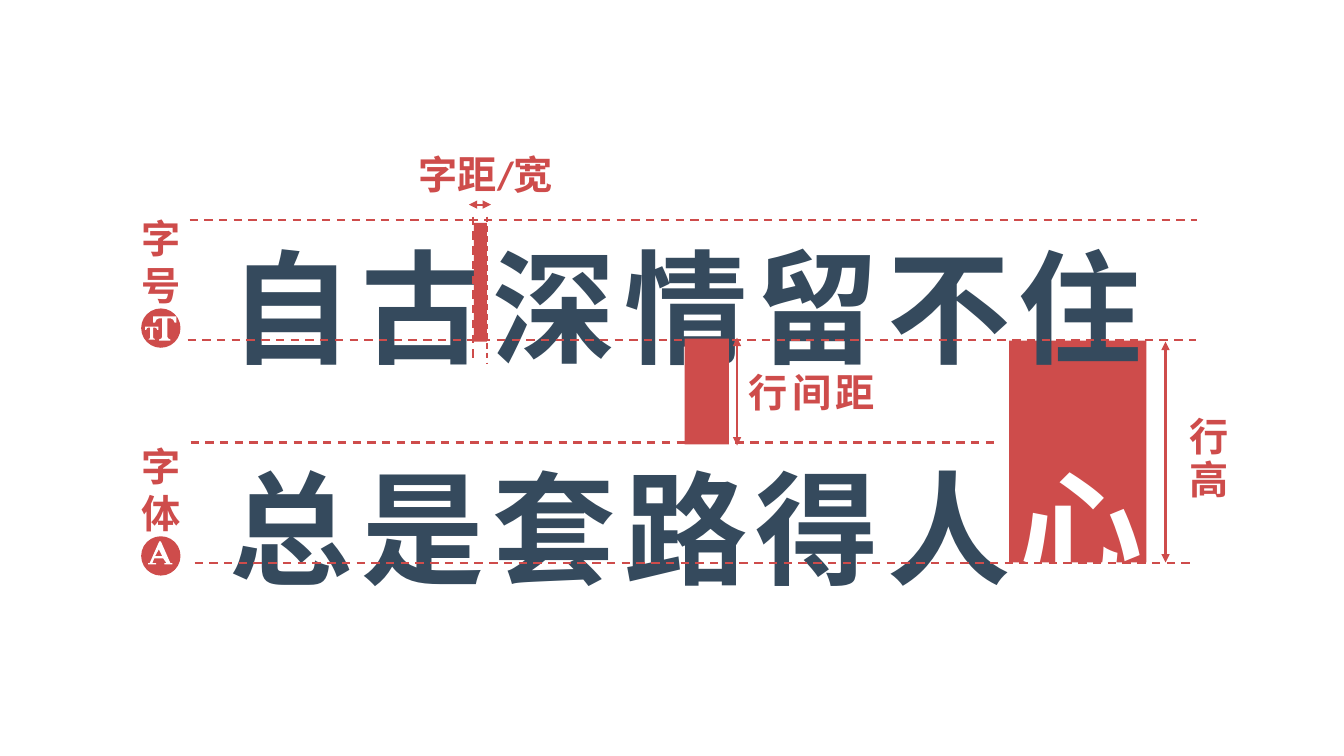
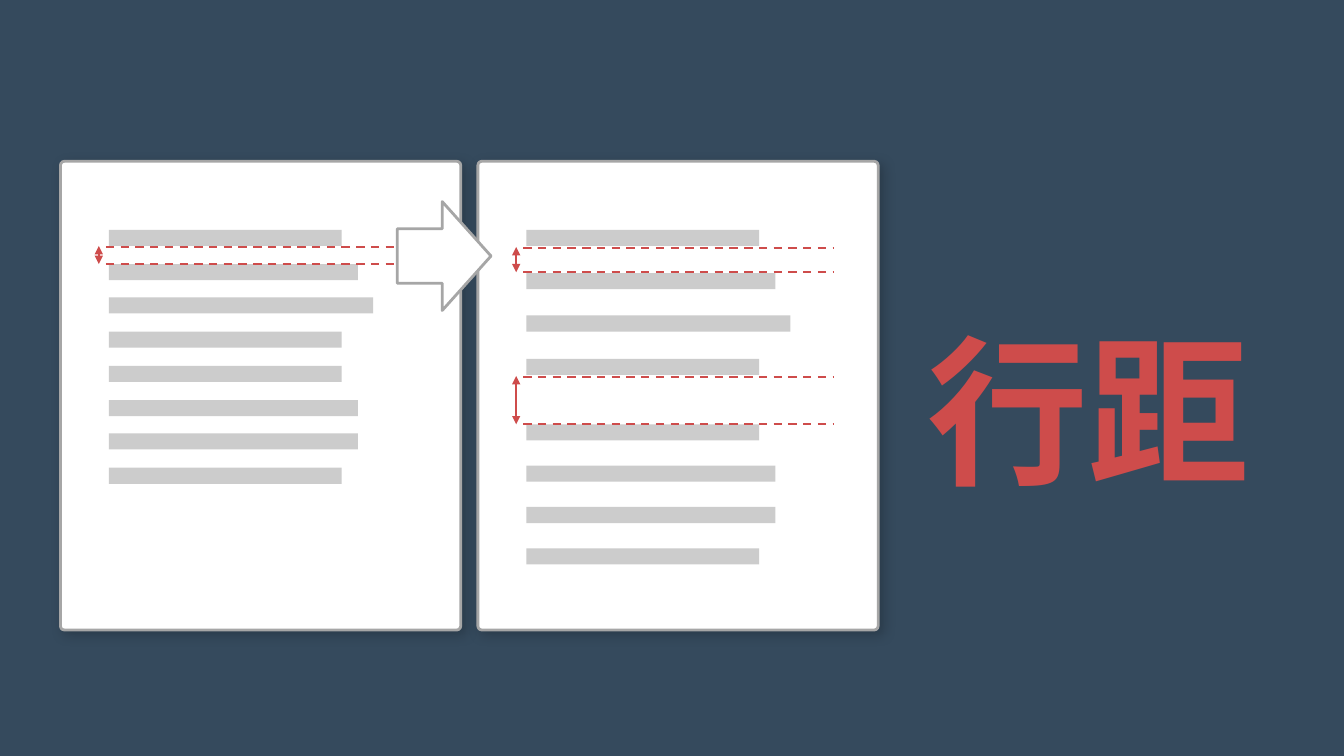
from dataclasses import dataclass

from lxml.etree import SubElement
from pptx import Presentation
from pptx.dml.color import RGBColor
from pptx.enum.dml import MSO_LINE
from pptx.enum.shapes import MSO_CONNECTOR, MSO_SHAPE
from pptx.enum.text import PP_ALIGN
from pptx.oxml.ns import qn
from pptx.util import Emu, Pt

UNIT = 9144  # one px is a hundredth of an inch


@dataclass(frozen=True)
class Theme:
    red: str = "CE4C4B"
    navy: str = "354A5D"
    white: str = "FFFFFF"
    edge: str = "A6A6A6"
    bar: str = "CCCCCC"
    font: str = "Calibri"
    small: int = 28
    large: int = 88
    huge: int = 115
    thin: float = 1
    line: float = 1.5
    frame: float = 2


T = Theme()

# Icon outlines on a 100 by 100 grid
HALF = [(100, 0), (100, 25), (92, 25), (86, 13), (76, 8), (61, 8),
        (61, 84), (65, 91), (74, 95), (74, 100)]
TEE = [HALF + [(100 - x, y) for x, y in reversed(HALF)]]
AYE = [[(62, 74), (25, 74), (17, 95), (33, 95), (33, 100), (0, 100),
        (0, 95), (6, 95), (46, 0), (52, 0), (92, 95), (100, 95),
        (100, 100), (67, 100), (67, 95), (76, 95)],
       [(29, 64), (58, 64), (44, 35)]]


def px(*sizes):
    return [Emu(size * UNIT) for size in sizes]


def rgb(code):
    return RGBColor.from_string(code)


def spread(first, last, count):
    """Even steps from first to last, as whole px."""
    return [round(first + (last - first) * i / (count - 1))
            for i in range(count)]


# Basic parts
def paint(shape, fill, edge=None):
    shape.shadow.inherit = False
    shape.fill.solid()
    shape.fill.fore_color.rgb = rgb(fill)
    if edge:
        shape.line.color.rgb = rgb(edge)
        shape.line.width = Pt(T.frame)
    else:
        shape.line.fill.background()
    return shape


def block(shapes, box, fill, edge=None, kind=MSO_SHAPE.RECTANGLE):
    return paint(shapes.add_shape(kind, *px(*box)), fill, edge)


def rule(shapes, start, end, width=T.line, arrow=False):
    """A dashed guide, or a solid measure with two arrowheads."""
    item = shapes.add_connector(MSO_CONNECTOR.STRAIGHT, *px(*start, *end))
    item.line.color.rgb = rgb(T.red)
    item.line.width = Pt(width)
    if arrow:
        line = item.line._get_or_add_ln()
        for tip in ("a:headEnd", "a:tailEnd"):
            SubElement(line, qn(tip), type="triangle")
    else:
        item.line.dash_style = MSO_LINE.DASH
    SubElement(item._element.spPr, qn("a:effectLst"))


def label(shapes, box, lines, size=T.small, color=T.red,
          align=PP_ALIGN.LEFT, gap=0, lead=None):
    frame = shapes.add_textbox(*px(*box)).text_frame
    frame.word_wrap = True
    frame.text = "\n".join(lines)
    for para in frame.paragraphs:
        para.alignment = align
        para.line_spacing = lead
        for run in para.runs:
            style(run, size, color, gap)
    return frame


def style(run, size, color, gap=0):
    run.font.name = T.font
    run.font.size = Pt(size)
    run.font.bold = True
    run.font.color.rgb = rgb(color)
    if gap:
        run._r.get_or_add_rPr().set("spc", str(gap * 100))


def glyph(shapes, box, rings):
    x, y, wide, high = px(*box)
    pen = shapes.build_freeform(*rings[0][0], scale=(wide / 100, high / 100))
    for i, ring in enumerate(rings):
        if i:
            pen.move_to(*ring[0])
        pen.add_line_segments(ring[1:], close=True)
    paint(pen.convert_to_shape(x, y), T.white)


# Slide 1: type terms
def badge(slide, x, y, word, icons):
    """A stacked word over a round icon."""
    shapes = slide.shapes.add_group_shape().shapes
    label(shapes, (x, y, 116, 104), word, align=PP_ALIGN.CENTER)
    block(shapes, (x + 38, y + 98, 39, 39), T.red, kind=MSO_SHAPE.OVAL)
    for (dx, dy, wide, high), rings in icons:
        glyph(shapes, (x + dx, y + dy, wide, high), rings)


def sample(slide, x, y):
    """The two lines of large text, with the row height block behind."""
    shapes = slide.shapes
    block(shapes, (x + 815, y + 187, 136, 220), T.red)
    frame = label(shapes, (x, y, 957, 454), ["自古深情留不住", "总是套路得人"],
                  T.large, T.navy, PP_ALIGN.RIGHT, 6, 1.5)
    last = frame.paragraphs[1].add_run()
    last.text = "心"
    style(last, T.large, T.white, 6)


def space(slide, x, y):
    """Letter spacing: bar, side guides, measure and label."""
    shapes = slide.shapes
    block(shapes, (x, y, 13, 118), T.red)
    for left, width in ((x - 1, T.line), (x + 13, T.thin)):
        rule(shapes, (left, y - 6), (left, y + 139), width)
    rule(shapes, (x - 5, y - 18), (x + 17, y - 18), arrow=True)
    label(shapes, (x - 78, y - 77, 180, 57), ["字距/宽"],
          align=PP_ALIGN.CENTER)


def lead(slide, x, y):
    """Gap between the lines: measure, bar and label."""
    shapes = slide.shapes
    rule(shapes, (x + 52, y - 1), (x + 52, y + 106), arrow=True)
    block(shapes, (x, y, 44, 105), T.red)
    label(shapes, (x + 54, y + 24, 200, 57), ["行间距"], gap=3)


def height(slide, x, y):
    """Row height: measure and upright label."""
    shapes = slide.shapes
    rule(shapes, (x, y), (x, y + 219), arrow=True)
    frame = label(shapes, (x + 3, y + 65, 67, 108), ["行高"],
                  align=PP_ALIGN.CENTER, gap=3)
    frame._txBody.bodyPr.set("vert", "eaVert")


def terms(slide):
    sample(slide, 186, 151)
    space(slide, 470, 221)
    for left, right, y in ((188, 1187, 218), (186, 1186, 337),
                           (189, 991, 439), (193, 1186, 559)):
        rule(slide.shapes, (left, y), (right, y))
    lead(slide, 679, 336)
    height(slide, 1156, 339)
    badge(slide, 102, 208, "字号",
          [((50, 106, 23, 24), TEE), ((42, 116, 13, 13), TEE)])
    badge(slide, 102, 434, "字体", [((45, 103, 24, 23), AYE)])


# Slide 2: line spacing
def shade(shape):
    fx = shape._element.spPr.find(qn("a:effectLst"))
    drop = SubElement(fx, qn("a:outerShdw"), blurRad=str(Pt(9)),
                      dist=str(Pt(3)), dir=str(45 * 60000),
                      algn="tl", rotWithShape="0")
    tone = SubElement(drop, qn("a:srgbClr"), val="000000")
    SubElement(tone, qn("a:alpha"), val="20000")


def page(slide, x, y, tops, gaps):
    """A sheet of grey text bars with its measured gaps."""
    shapes = slide.shapes.add_group_shape().shapes
    sheet = block(shapes, (x, y, 397, 465), T.white, T.edge,
                  MSO_SHAPE.ROUNDED_RECTANGLE)
    sheet.adjustments[0] = 0.01
    shade(sheet)
    for top, wide in zip(tops, (231, 247, 262, 231, 231, 247, 247, 231)):
        block(shapes, (x + 48, y + top, wide, 16), T.bar)
    for gap in gaps:
        for edge in gap:
            rule(shapes, (x + 45, y + edge), (x + 352, y + edge))
        rule(shapes, (x + 38, y + gap[0] - 1), (x + 38, y + gap[1]),
             arrow=True)


def rows(slide):
    slide.background.fill.solid()
    slide.background.fill.fore_color.rgb = rgb(T.navy)
    page(slide, 60, 160, spread(68, 304, 8), [(85, 102)])
    page(slide, 474, 160, spread(68, 196, 4) + spread(261, 384, 4),
         [(86, 110), (214, 261)])
    label(slide.shapes, (910, 266, 377, 226), ["行距"], T.huge, lead=1.2)
    arrow = block(slide.shapes, (394, 200, 93, 108), T.white, T.edge,
                  MSO_SHAPE.RIGHT_ARROW)
    arrow.adjustments[1] = 0.52


def main():
    deck = Presentation()
    deck.slide_width, deck.slide_height = px(1333, 750)
    for fill in (terms, rows):
        fill(deck.slides.add_slide(deck.slide_layouts[6]))
    deck.save("out.pptx")


if __name__ == "__main__":
    main()
